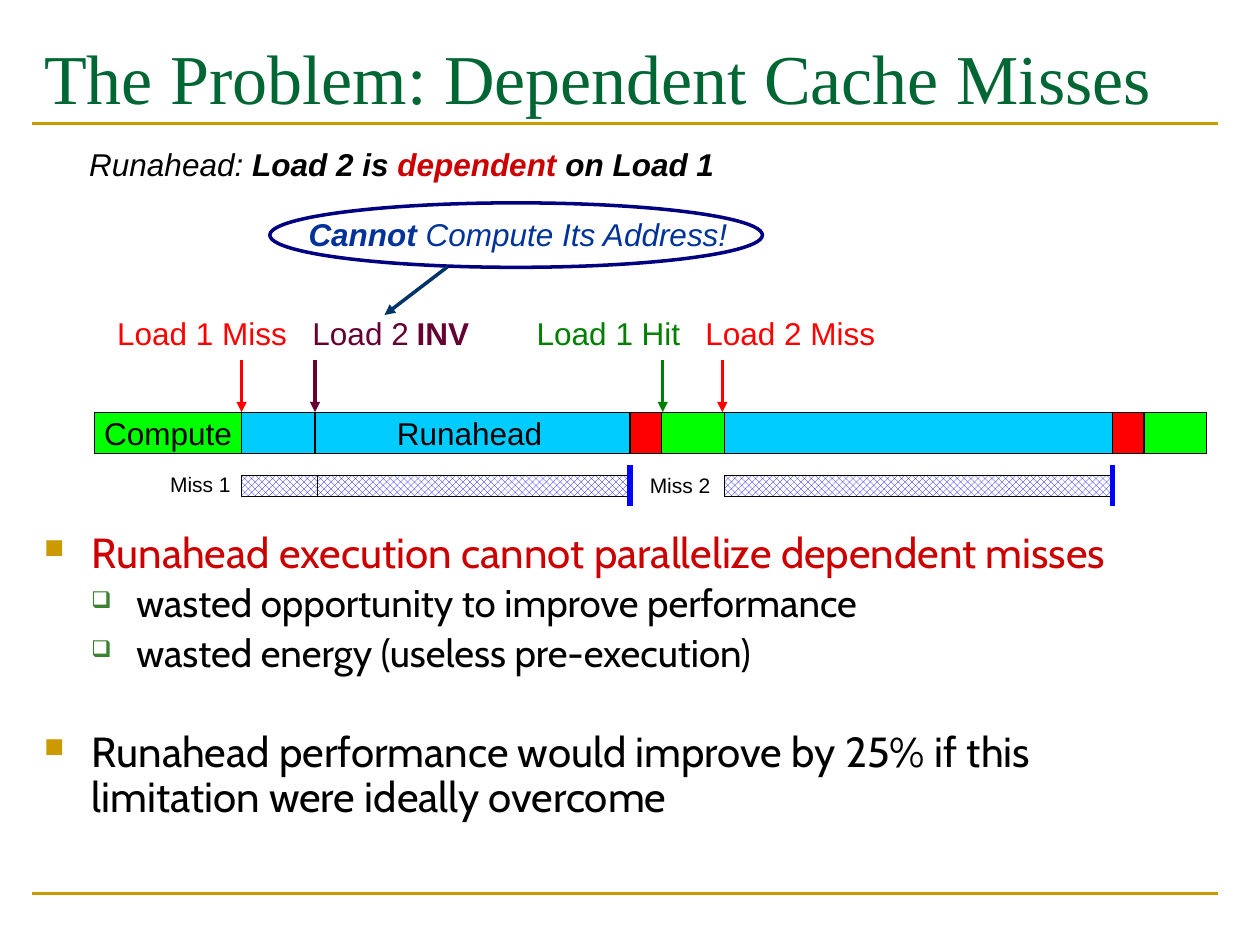
import pptx
import pptx.dml.color
import pptx.enum.dml
import pptx.enum.shapes
import pptx.oxml
import pptx.oxml.ns
import pptx.util
from pptx.dml.color import RGBColor
from pptx.util import Cm, Pt

BLACK = RGBColor(0x00, 0x00, 0x00)
WHITE = RGBColor(0xFF, 0xFF, 0xFF)
GOLD = RGBColor(0xCC, 0x99, 0x00)
TITLE_GREEN = RGBColor(0x00, 0x66, 0x33)
BULLET_GREEN = RGBColor(0x3B, 0x81, 0x2F)
HIT_GREEN = RGBColor(0x00, 0x80, 0x00)
LIME = RGBColor(0x00, 0xFF, 0x00)
RED = RGBColor(0xFF, 0x00, 0x00)
DARK_RED = RGBColor(0xCC, 0x00, 0x00)
PLUM = RGBColor(0x66, 0x00, 0x33)
SKY = RGBColor(0x00, 0xCC, 0xFF)
BLUE = RGBColor(0x00, 0x00, 0xFF)
NAVY = RGBColor(0x00, 0x00, 0x80)
CALLOUT_BLUE = RGBColor(0x00, 0x33, 0x99)
POINTER_BLUE = RGBColor(0x00, 0x33, 0x66)

deck = pptx.Presentation()
deck.slide_width, deck.slide_height = Cm(25.4), Cm(19.05)
slide = deck.slides.add_slide(deck.slide_layouts[6])
shapes = slide.shapes


def add_text(left, top, width, height, parts, size=18, face="Arial", wrap=False):
    """Add one line of text; each part is (text, colour, bold, italic)."""
    box = shapes.add_textbox(Cm(left), Cm(top), Cm(width), Cm(height))
    box.text_frame.word_wrap = wrap
    for text, colour, bold, italic in parts:
        run = box.text_frame.paragraphs[0].add_run()
        run.text = text
        run.font.name, run.font.size = face, Pt(size)
        run.font.bold, run.font.italic = bold, italic
        run.font.color.rgb = colour


def add_line(x1, y1, x2, y2, colour, weight, arrow=False):
    line = shapes.add_connector(
        pptx.enum.shapes.MSO_CONNECTOR.STRAIGHT, Cm(x1), Cm(y1), Cm(x2), Cm(y2))
    line.line.color.rgb = colour
    line.line.width = Pt(weight)
    if arrow:
        head = pptx.oxml.parse_xml(
            f'<a:tailEnd {pptx.oxml.ns.nsdecls("a")} type="triangle"/>')
        line.line._get_or_add_ln().append(head)
    line._element.spPr.append(
        pptx.oxml.parse_xml(f'<a:effectLst {pptx.oxml.ns.nsdecls("a")}/>'))


# Title and the two rules
for rule_y in (2.49, 18.01):
    add_line(0.64, rule_y, 24.56, rule_y, GOLD, 1.5)
add_text(0.64, 0.58, 23.93, 1.8,
         [("The Problem: Dependent Cache Misses", TITLE_GREEN, False, False)],
         size=40, face="Times New Roman", wrap=True)

# Timeline: execution segments above, outstanding misses below
BAR_TOP, BAR_HEIGHT = 8.31, 0.84
MISS_TOP, MISS_HEIGHT = 9.58, 0.43
start, miss1, load2, miss1_end, hit, miss2, miss2_end, resume, end = (
    1.91, 4.87, 6.35, 12.7, 13.34, 14.61, 22.43, 23.06, 24.33)
blocks = [
    (start, miss1, LIME), (miss1, load2, SKY), (load2, miss1_end, SKY),
    (miss1_end, hit, RED), (hit, miss2, LIME), (miss2, miss2_end, SKY),
    (miss2_end, resume, RED), (resume, end, LIME),
    (miss1, 6.4, None), (6.4, 12.65, None), (miss2, miss2_end, None),
]
for left, right, colour in blocks:
    top, height = (BAR_TOP, BAR_HEIGHT) if colour else (MISS_TOP, MISS_HEIGHT)
    block = shapes.add_shape(pptx.enum.shapes.MSO_SHAPE.RECTANGLE,
                             Cm(left), Cm(top), Cm(right - left), Cm(height))
    block.shadow.inherit = False
    if colour:
        block.fill.solid()
        block.fill.fore_color.rgb = colour
    else:
        block.fill.patterned()
        block.fill.pattern = pptx.enum.dml.MSO_PATTERN.LARGE_CHECKER_BOARD
        block.fill.fore_color.rgb = BLUE
        block.fill.back_color.rgb = WHITE
    block.line.color.rgb = BLACK
    block.line.width = Pt(0.75)

# Ends of the misses
for miss_end in (miss1_end, miss2_end):
    add_line(miss_end, 9.37, miss_end, 10.21, BLUE, 3)

# Load events
for x, colour in ((miss1, RED), (load2, PLUM), (13.36, HIT_GREEN), (14.56, RED)):
    add_line(x, 7.26, x, BAR_TOP, colour, 1.75, arrow=True)

# Timeline labels
labels = [
    ("Load 1 Miss", 2.11, 6.2, 3.94, RED, 18, False),
    ("Load 2", 6.05, 6.2, 2.46, PLUM, 18, False),
    ("INV", 8.15, 6.2, 1.57, PLUM, 18, True),
    ("Load 1 Hit", 10.57, 6.2, 3.4, HIT_GREEN, 18, False),
    ("Load 2 Miss", 13.97, 6.2, 3.94, RED, 18, False),
    ("Compute", 1.85, 8.22, 3.1, BLACK, 18, False),
    ("Runahead", 7.75, 8.22, 3.43, BLACK, 18, False),
    ("Miss 1", 3.18, 9.38, 1.73, BLACK, 12, False),
    ("Miss 2", 12.85, 9.4, 1.73, BLACK, 12, False),
]
for text, left, top, width, colour, size, bold in labels:
    add_text(left, top, width, size * 0.056, [(text, colour, bold, False)], size)

# Heading of the timeline and callout
add_text(1.55, 2.8, 13.72, 1.02, [
    ("Runahead: ", BLACK, False, True), ("Load 2 is ", BLACK, True, True),
    ("dependent ", DARK_RED, True, True), ("on Load 1", BLACK, True, True),
], wrap=True)
add_text(5.97, 4.22, 9.3, 1.02, [
    ("Cannot", CALLOUT_BLUE, True, True),
    (" Compute Its Address!", CALLOUT_BLUE, False, True),
], wrap=True)
callout = shapes.add_shape(pptx.enum.shapes.MSO_SHAPE.OVAL,
                           Cm(5.44), Cm(4.09), Cm(9.93), Cm(1.3))
callout.shadow.inherit = False
callout.fill.background()
callout.line.color.rgb = NAVY
callout.line.width = Pt(2)
add_line(9.02, 5.38, 7.75, 6.35, POINTER_BLUE, 2, arrow=True)

# Conclusions: text, level, colour, size, space before
conclusions = [
    ("Runahead execution cannot parallelize dependent misses", 0, DARK_RED, 24, 0),
    ("wasted opportunity to improve performance", 1, BLACK, 22, 4.4),
    ("wasted energy (useless pre-execution)", 1, BLACK, 22, 4.4),
    ("Runahead performance would improve by 25% if this limitation were "
     "ideally overcome", 0, BLACK, 24, 31.5),
]
# Bullet by level: character, colour, size in %, text indent, hanging indent
bullets = [("■", GOLD, 65, 0.96, 0.96), ("❑", BULLET_GREEN, 60, 1.86, 0.91)]
body = shapes.add_textbox(Cm(0.64), Cm(10.72), Cm(23.93), Cm(6.5)).text_frame
body.word_wrap = True
body.margin_top = 0
for index, (text, level, colour, size, gap) in enumerate(conclusions):
    paragraph = body.add_paragraph() if index else body.paragraphs[0]
    paragraph.text = text
    paragraph.level = level
    paragraph.line_spacing = 0.9
    paragraph.space_before = Pt(gap)
    font = paragraph.runs[0].font
    font.name, font.size, font.color.rgb = "Cabin", Pt(size), colour
    mark, mark_colour, percent, indent, hanging = bullets[level]
    properties = paragraph._p.get_or_add_pPr()
    properties.set("marL", str(Cm(indent)))
    properties.set("indent", str(-Cm(hanging)))
    ns = pptx.oxml.ns.nsdecls("a")
    for xml in (f'<a:buClr {ns}><a:srgbClr val="{mark_colour}"/></a:buClr>',
                f'<a:buSzPct {ns} val="{percent * 1000}"/>',
                f'<a:buChar {ns} char="{mark}"/>'):
        properties.append(pptx.oxml.parse_xml(xml))

deck.save("out.pptx")
